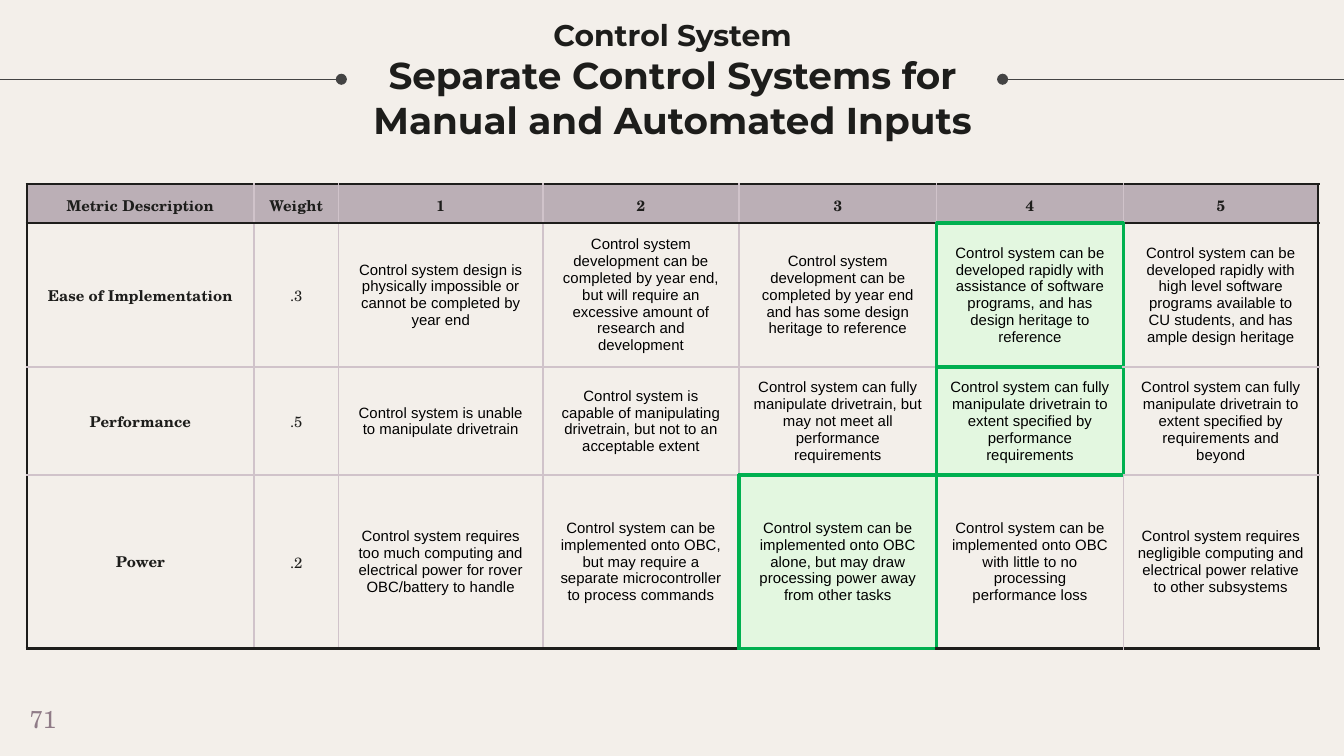
"""Build the control system trade study slide with its scoring table."""
from lxml import etree
from pptx import Presentation
from pptx.dml.color import RGBColor
from pptx.enum.shapes import MSO_CONNECTOR
from pptx.enum.text import MSO_ANCHOR, MSO_AUTO_SIZE, PP_ALIGN
from pptx.oxml.ns import qn
from pptx.util import Inches, Pt

STRAIGHT = MSO_CONNECTOR.STRAIGHT
MIDDLE = MSO_ANCHOR.MIDDLE
CENTER = PP_ALIGN.CENTER
NO_AUTOFIT = MSO_AUTO_SIZE.NONE

HEADING = "Montserrat"
SERIF = "TeX Gyre Schola"
SANS = "Arial"
INK = "1D1D1B"
BLACK = "000000"
HEADER_FILL = "BBAFB6"
CHOSEN_FILL = "D5FFD7"
OUTER = (INK, 1.5)
INNER = ("D0C3CA", 1)
CHOSEN_EDGE = ("00B050", 2.25)

TITLE = "Control System\vSeparate Control Systems for Manual and Automated Inputs"
TITLE_SIZES = (16, 20)
PAGE_NUMBER = "71"
RULES = [(2.54, -0.03), (7.46, 10.01)]
RULE_Y = 0.59

COLUMN_WIDTHS = [1.69, 0.63, 1.52, 1.46, 1.47, 1.39, 1.45]
ROW_HEIGHTS = [0.29, 0.27, 0.78, 1.29]
FRAME_SIDE = 3.28
CHOSEN = {(1, 5), (2, 5), (3, 4)}
METRICS = [
    ["Metric Description", "Weight", "1", "2", "3", "4", "5"],
    [
        "Ease of Implementation",
        ".3",
        "Control system design is physically impossible or cannot be completed by year end",
        "Control system development can be completed by year end, but will require "
        "an excessive amount of research and development",
        "Control system development can be completed by year end and has some design "
        "heritage to reference",
        "Control system can be developed rapidly with assistance of software programs, "
        "and has design heritage to reference",
        "Control system can be developed rapidly with high level software programs "
        "available to CU students, and has ample design heritage",
    ],
    [
        "Performance",
        ".5",
        "Control system is unable to manipulate drivetrain",
        "Control system is capable of manipulating drivetrain, but not to an acceptable extent",
        "Control system can fully manipulate drivetrain, but may not meet all "
        "performance requirements",
        "Control system can fully manipulate drivetrain to extent specified by "
        "performance requirements",
        "Control system can fully manipulate drivetrain to extent specified by "
        "requirements and beyond",
    ],
    [
        "Power",
        ".2",
        "Control system requires too much computing and electrical power for rover "
        "OBC/battery to handle",
        "Control system can be implemented onto OBC, but may require a separate "
        "microcontroller to process commands",
        "Control system can be implemented onto OBC alone, but may draw processing "
        "power away from other tasks",
        "Control system can be implemented onto OBC with little to no processing "
        "performance loss",
        "Control system requires negligible computing and electrical power relative "
        "to other subsystems",
    ],
]


def rgb(color):
    return RGBColor.from_string(color)


def style_run(run, font, size, color, bold=False):
    run.font.name = font
    run.font.size = Pt(size)
    run.font.color.rgb = rgb(color)
    run.font.bold = bold


def add_title(slide):
    title = slide.shapes.title
    title.left, title.top = Inches(2.54), Inches(0.12)
    title.width, title.height = Inches(4.93), Inches(0.94)
    frame = title.text_frame
    frame.text = TITLE
    frame.auto_size = NO_AUTOFIT
    frame.vertical_anchor = MIDDLE
    frame.margin_left = frame.margin_right = Inches(0.1)
    frame.margin_top = frame.margin_bottom = Inches(0.1)
    heading = frame.paragraphs[0]
    heading.alignment = CENTER
    for run, size in zip(heading.runs, TITLE_SIZES):
        style_run(run, HEADING, size, INK, True)
    line_break = heading._p.find(qn("a:br"))
    etree.SubElement(line_break, qn("a:rPr"), sz=str(TITLE_SIZES[0] * 100))


def add_rule(slide, start, end):
    rule = slide.shapes.add_connector(
        STRAIGHT, Inches(start), Inches(RULE_Y), Inches(end), Inches(RULE_Y))
    rule.line.color.rgb = rgb("434343")
    rule.line.width = Pt(0.75)
    etree.SubElement(rule.line._get_or_add_ln(), qn("a:headEnd"), type="oval")
    etree.SubElement(rule._element.spPr, qn("a:effectLst"))


def add_page_number(slide):
    box = slide.shapes.add_textbox(Inches(0.02), Inches(5.14), Inches(0.6), Inches(0.43))
    frame = box.text_frame
    frame.word_wrap = True
    frame.margin_left = frame.margin_right = Inches(0.1)
    frame.margin_top = frame.margin_bottom = Inches(0.1)
    frame.text = PAGE_NUMBER
    frame.paragraphs[0].alignment = CENTER
    style_run(frame.paragraphs[0].runs[0], SERIF, 13, "8F7B87")


def edge_style(position, neighbor):
    """Return the colour and width of the edge between two grid positions."""
    if position in CHOSEN or neighbor in CHOSEN:
        return CHOSEN_EDGE
    row, column = neighbor
    outside = not (0 <= row < len(ROW_HEIGHTS) and 0 <= column < len(COLUMN_WIDTHS))
    under_header = {position[0], row} == {0, 1}
    return OUTER if outside or under_header else INNER


def set_borders(cell, row, column):
    neighbors = {
        "L": (row, column - 1),
        "R": (row, column + 1),
        "T": (row - 1, column),
        "B": (row + 1, column),
    }
    properties = cell._tc.get_or_add_tcPr()
    for side, neighbor in neighbors.items():
        color, width = edge_style((row, column), neighbor)
        border = etree.SubElement(properties, qn(f"a:ln{side}"), w=str(Pt(width)))
        fill = etree.SubElement(border, qn("a:solidFill"))
        etree.SubElement(fill, qn("a:srgbClr"), val=color)


def set_fill(cell, row, column):
    if row and (row, column) not in CHOSEN:
        cell.fill.background()
        return
    cell.fill.solid()
    cell.fill.fore_color.rgb = rgb(CHOSEN_FILL if row else HEADER_FILL)
    if row:
        color = cell._tc.tcPr.find(qn("a:solidFill")).find(qn("a:srgbClr"))
        etree.SubElement(color, qn("a:alpha"), val="50000")


def fill_cell(cell, text, row, column):
    cell.text = text
    cell.vertical_anchor = MIDDLE
    cell.margin_left = cell.margin_right = Inches(0.1)
    cell.margin_top = cell.margin_bottom = Inches(0.07)
    is_label = row == 0 or column < 2
    font, color = (SERIF, INK) if is_label else (SANS, BLACK)
    paragraph = cell.text_frame.paragraphs[0]
    paragraph.alignment = CENTER
    style_run(paragraph.runs[0], font, 8, color, row == 0 or column == 0)
    set_borders(cell, row, column)
    set_fill(cell, row, column)


def add_metrics(slide):
    frame = slide.shapes.add_table(
        len(ROW_HEIGHTS), len(COLUMN_WIDTHS), Inches(0.2), Inches(1.37),
        Inches(FRAME_SIDE), Inches(FRAME_SIDE))
    table = frame.table
    table.first_row = table.horz_banding = False
    for column, width in zip(table.columns, COLUMN_WIDTHS):
        column.width = Inches(width)
    for row, height in zip(table.rows, ROW_HEIGHTS):
        row.height = Inches(height)
    frame.width = frame.height = Inches(FRAME_SIDE)
    for row, texts in enumerate(METRICS):
        for column, text in enumerate(texts):
            fill_cell(table.cell(row, column), text, row, column)


def main():
    deck = Presentation()
    deck.slide_width = Inches(10)
    deck.slide_height = deck.slide_width * 9 // 16
    slide = deck.slides.add_slide(deck.slide_layouts[5])
    slide.background.fill.solid()
    slide.background.fill.fore_color.rgb = rgb("F3EFEA")
    for start, end in RULES:
        add_rule(slide, start, end)
    add_title(slide)
    add_page_number(slide)
    add_metrics(slide)
    deck.save("out.pptx")


if __name__ == "__main__":
    main()
